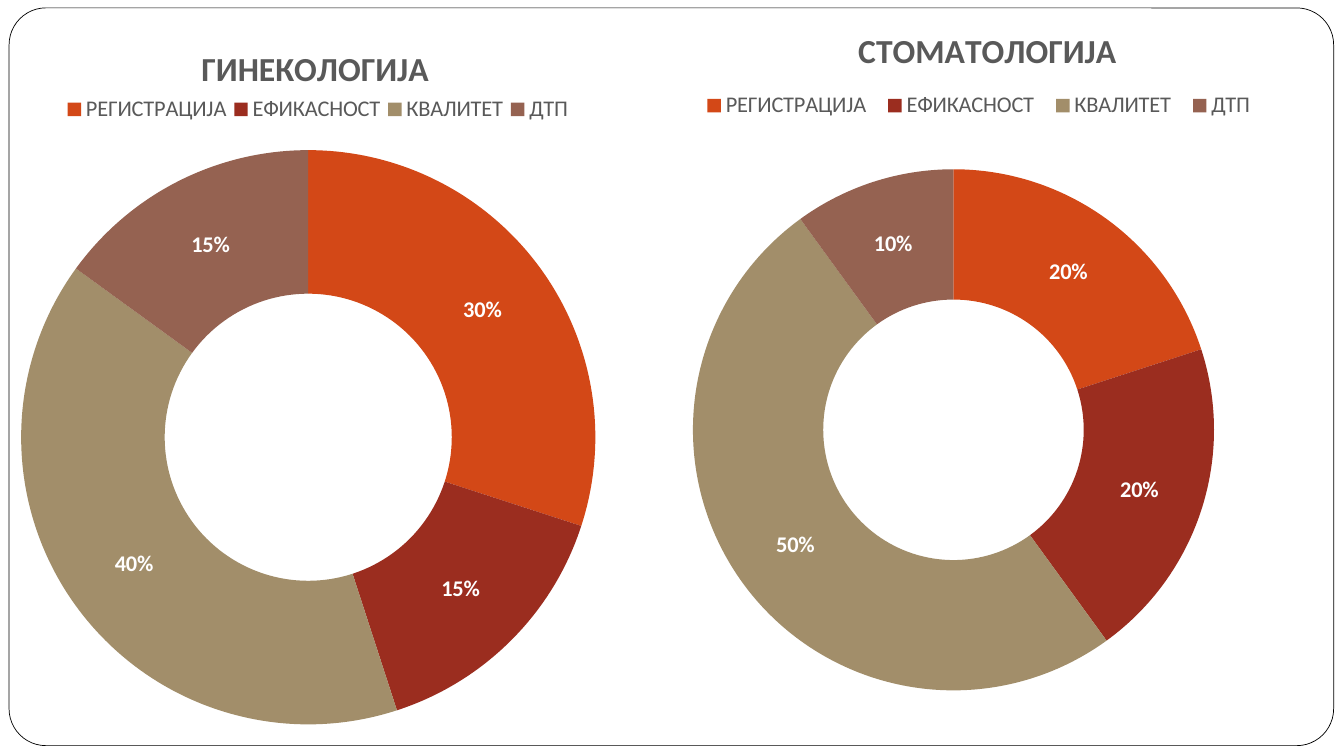
from lxml import etree
from pptx import Presentation
from pptx import util as u
from pptx.chart.data import CategoryChartData
from pptx.dml.color import RGBColor
from pptx.enum import chart as ch, shapes
from pptx.oxml.ns import qn

WHITE = RGBColor(0xFF, 0xFF, 0xFF)
BLACK = RGBColor(0, 0, 0)
GRAY = RGBColor(0x59, 0x59, 0x59)
ORANGE = RGBColor(0xD3, 0x48, 0x17)
RED = RGBColor(0x9B, 0x2D, 0x1F)
SAND = RGBColor(0xA2, 0x8E, 0x6A)
BROWN = RGBColor(0x95, 0x62, 0x51)
PARTS = {"РЕГИСТРАЦИЈА": ORANGE, "ЕФИКАСНОСТ": RED, "КВАЛИТЕТ": SAND, "ДТП": BROWN}


class Deck:
    face = "Calibri"

    def __init__(self):
        self.deck = Presentation()
        self.deck.slide_width = u.Cm(33.87)
        self.deck.slide_height = u.Cm(19.05)
        self.slide = self.deck.slides.add_slide(self.deck.slide_layouts[6])

    def style(self, font, size, color, bold=False):
        font.name = self.face
        font.size = u.Pt(size)
        font.color.rgb = color
        font.bold = bold

    def frame(self, *box):
        panel = self.slide.shapes.add_shape(
            shapes.MSO_SHAPE.ROUNDED_RECTANGLE, *map(u.Cm, box))
        panel.adjustments[0] = 0.05
        panel.shadow.inherit = False
        panel.fill.solid()
        panel.fill.fore_color.rgb = WHITE
        panel.line.color.rgb = BLACK
        panel.line.width = u.Pt(0.5)

    def place(self, chart, name, spot):
        part = chart.element.xpath(f"c:chart//c:{name}")[0]
        for old in part.findall(qn("c:layout")):
            part.remove(old)
        layout = etree.Element(qn("c:layout"))
        manual = etree.SubElement(layout, qn("c:manualLayout"))
        rules = {"xMode": "edge", "yMode": "edge"}
        if name == "plotArea":
            rules = {"layoutTarget": "inner", **rules}
        for tag, val in {**rules, **dict(zip("xywh", spot))}.items():
            etree.SubElement(manual, qn(f"c:{tag}")).set("val", str(val))
        if name == "plotArea":
            part.insert(0, layout)
        else:
            part.find(qn("c:overlay")).addprevious(layout)

    def ring(self, name, vals, box, spots):
        data = CategoryChartData()
        data.categories = list(PARTS)
        data.add_series(name, vals)
        chart = self.slide.shapes.add_chart(
            ch.XL_CHART_TYPE.DOUGHNUT, *map(u.Cm, box), data).chart
        self.style(chart.font, 10, BLACK)

        chart.has_title = True
        title = chart.chart_title.text_frame
        title.text = name
        self.style(title.paragraphs[0].runs[0].font, 24, GRAY, True)

        chart.has_legend = True
        chart.legend.position = ch.XL_LEGEND_POSITION.TOP
        chart.legend.include_in_layout = False
        self.style(chart.legend.font, 16, GRAY)

        plot = chart.plots[0]
        plot.vary_by_categories = True
        for i, color in enumerate(PARTS.values()):
            fill = plot.series[0].points[i].format.fill
            fill.solid()
            fill.fore_color.rgb = color

        plot.has_data_labels = True
        labels = plot.data_labels
        labels.show_percentage = True
        labels.show_value = False
        labels.number_format = "0%"
        labels.number_format_is_linked = False
        self.style(labels.font, 16, WHITE, True)

        for part, spot in spots.items():
            self.place(chart, part, spot)


def main():
    deck = Deck()
    deck.frame(0.23, 0.2, 33.38, 18.59)
    deck.ring("ГИНЕКОЛОГИЈА", (30, 15, 40, 15), (-0.28, 0.28, 16.26, 18.36), {
        "title": (0.32, 0.04),
        "legend": (0.11, 0.11, 0.8, 0.05),
        "plotArea": (0.05, 0.19, 0.89, 0.79)})
    deck.ring("СТОМАТОЛОГИЈА", (20, 20, 50, 10), (14.91, 0, 18.24, 18.36), {
        "title": (0.36, 0.03),
        "legend": (0.14, 0.12, 0.79, 0.05),
        "plotArea": (0.14, 0.23, 0.72, 0.72)})
    deck.deck.save("out.pptx")


if __name__ == "__main__":
    main()
